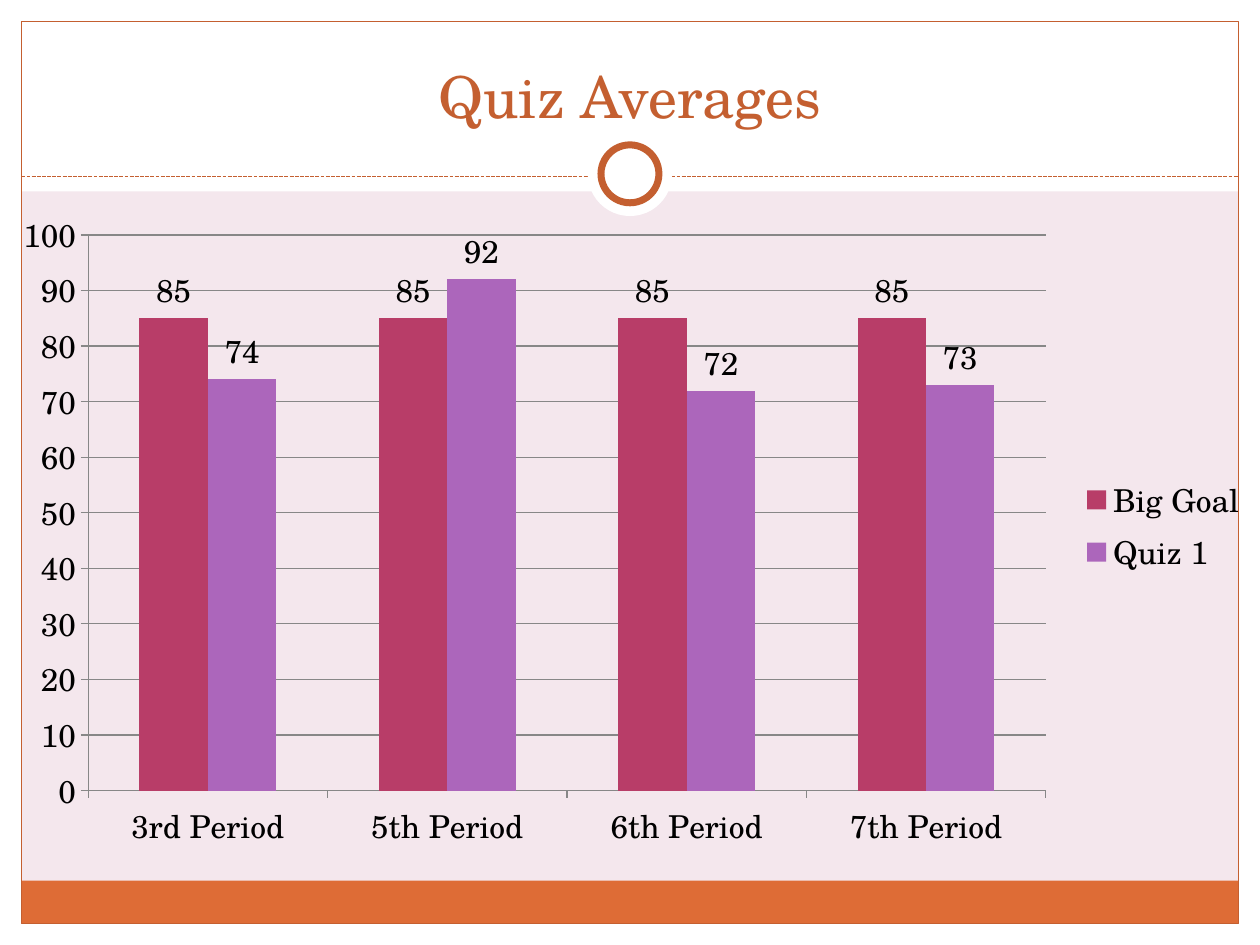
from lxml import etree
from pptx import Presentation
from pptx.chart.data import CategoryChartData
from pptx.dml.color import RGBColor
from pptx.enum.chart import XL_CHART_TYPE, XL_LABEL_POSITION, XL_LEGEND_POSITION, XL_TICK_MARK
from pptx.enum.dml import MSO_LINE
from pptx.enum.shapes import MSO_CONNECTOR, MSO_SHAPE
from pptx.enum.text import MSO_ANCHOR, PP_ALIGN
from pptx.oxml import parse_xml
from pptx.oxml.ns import nsdecls, qn
from pptx.util import Inches, Pt

RECT, OVAL = MSO_SHAPE.RECTANGLE, MSO_SHAPE.OVAL
COLUMNS = XL_CHART_TYPE.COLUMN_CLUSTERED
OUTSIDE, OUT_END = XL_TICK_MARK.OUTSIDE, XL_LABEL_POSITION.OUTSIDE_END
FONT = "TeX Gyre Schola"
WHITE, RUST, ORANGE, GREY = "FFFFFF", "C45F30", "DE6C36", "878787"
W, H, M = 10, 7.5, 0.17

rgb = RGBColor.from_string

prs = Presentation()
prs.slide_width, prs.slide_height = Inches(W), Inches(H)
s = prs.slides.add_slide(prs.slide_layouts[6])
s.background.fill.solid()
s.background.fill.fore_color.rgb = rgb("F4E7ED")


def add_text(text, x, y, w, h, size=18, color="000000", align=PP_ALIGN.CENTER, anchor=MSO_ANCHOR.BOTTOM):
    tf = s.shapes.add_textbox(Inches(x), Inches(y), Inches(w), Inches(h)).text_frame
    tf.word_wrap = True
    tf.vertical_anchor = anchor
    p = tf.paragraphs[0]
    p.alignment = align
    r = p.add_run()
    r.text = text
    r.font.name, r.font.size, r.font.color.rgb = FONT, Pt(size), rgb(color)


def add_shape(kind, x, y, w, h, fill=None, line=None, width=0.75):
    sp = s.shapes.add_shape(kind, Inches(x), Inches(y), Inches(w), Inches(h))
    sp.shadow.inherit = False
    if fill:
        sp.fill.solid()
        sp.fill.fore_color.rgb = rgb(fill)
    else:
        sp.fill.background()
    if line:
        sp.line.color.rgb = rgb(line)
        sp.line.width = Pt(width)
    else:
        sp.line.fill.background()


for x, y, w, h in [(0, H - M, W, M), (0, 0, W, 1.52), (0, 0, M, H), (W - M, 0, M, H)]:
    add_shape(RECT, x, y, w, h, WHITE)
add_shape(RECT, M, 6.99, W - 2 * M, 0.34, ORANGE)
add_shape(RECT, M, M, W - 2 * M, H - 2 * M, line=RUST)

rule = s.shapes.add_connector(MSO_CONNECTOR.STRAIGHT, Inches(M), Inches(1.4), Inches(W - M), Inches(1.4))
rule.line.color.rgb = rgb(RUST)
rule.line.width = Pt(0.75)
rule.line.dash_style = MSO_LINE.SQUARE_DOT
etree.SubElement(rule._element.spPr, qn("a:effectLst"))

for d, line in [(0.67, None), (0.46, RUST)]:
    add_shape(OVAL, (W - d) / 2, 1.38 - d / 2, d, d, WHITE, line, 4)

add_text("Quiz Averages", W / 30, H / 30, W * 14 / 15, 0.83, size=33, color=RUST)

data = CategoryChartData()
data.categories = [f"{n} Period" for n in ("3rd", "5th", "6th", "7th")]
data.add_series("Big Goal", [85] * 4)
data.add_series("Quiz 1", [74, 92, 72, 73])
chart = s.shapes.add_chart(COLUMNS, 0, Inches(1.55), Inches(W), Inches(H * 0.7), data).chart
chart.has_title = False
chart.font.name, chart.font.size, chart.font.color.rgb = FONT, Pt(18), rgb("000000")
chart.has_legend = True
chart.legend.position = XL_LEGEND_POSITION.RIGHT
chart.legend.include_in_layout = False

plot = chart.plots[0]
plot.gap_width, plot.overlap, plot.vary_by_categories = 150, 0, False
for ser, color in zip(plot.series, ("B83D68", "AC66BB")):
    ser.format.fill.solid()
    ser.format.fill.fore_color.rgb = rgb(color)
    labels = ser.data_labels
    labels.show_value = True
    labels.position = OUT_END

val = chart.value_axis
val.minimum_scale, val.maximum_scale, val.major_unit = 0, 100, 10
val.has_major_gridlines = True
for axis in (chart.category_axis, val):
    axis.major_tick_mark = OUTSIDE
for line in (chart.category_axis.format.line, val.format.line, val.major_gridlines.format.line):
    line.color.rgb = rgb(GREY)
    line.width = Pt(0.75)

area = chart._chartSpace.chart.plotArea
for old in area.findall(qn("c:layout")):
    area.remove(old)
shares = {"x": 0.07, "y": 0.06, "w": 0.76, "h": 0.84}
sizes = "".join(f'<c:{k} val="{v}"/>' for k, v in shares.items())
area.insert(0, parse_xml(
    f'<c:layout {nsdecls("c")}><c:manualLayout><c:layoutTarget val="inner"/>'
    f'<c:xMode val="edge"/><c:yMode val="edge"/>{sizes}</c:manualLayout></c:layout>'))

prs.save("out.pptx")
